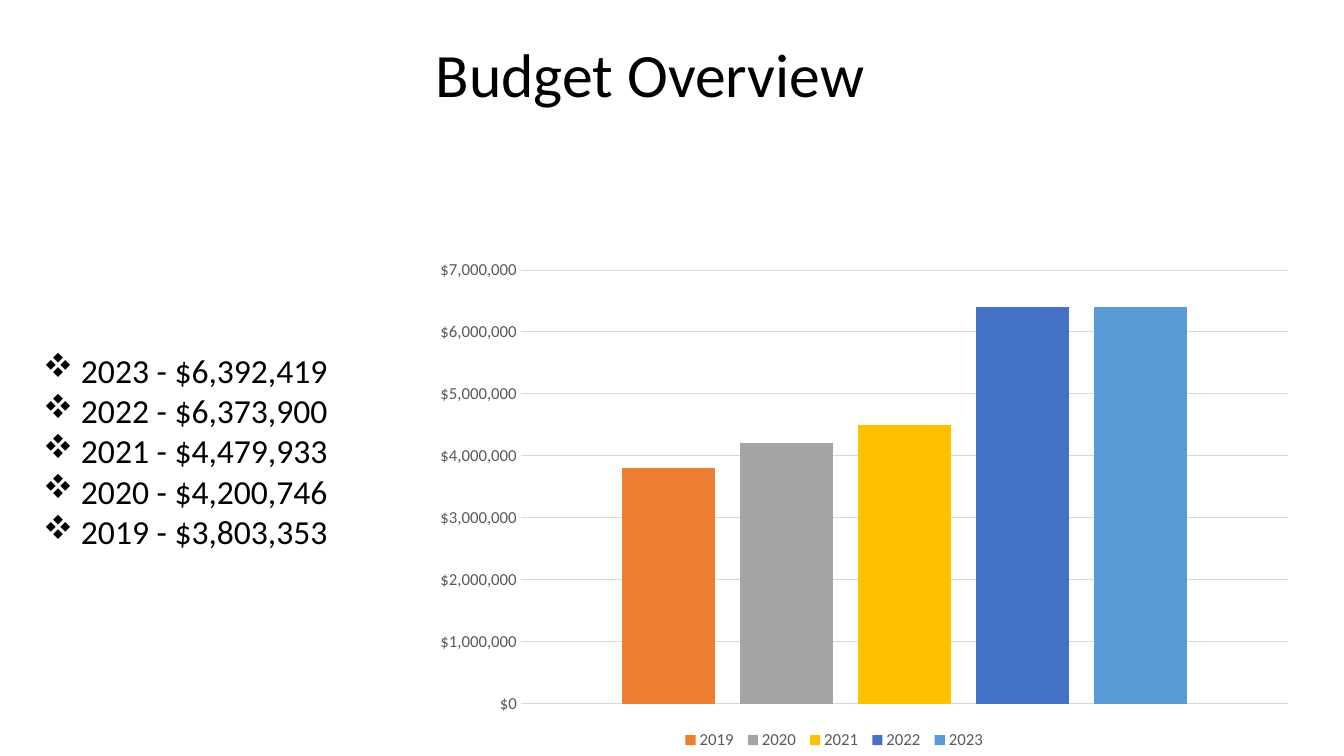
from lxml import etree
from pptx import Presentation
from pptx.chart.data import CategoryChartData
from pptx.dml.color import RGBColor
from pptx.enum.chart import XL_CHART_TYPE, XL_LEGEND_POSITION, XL_TICK_MARK
from pptx.enum.text import PP_ALIGN
from pptx.oxml import parse_xml
from pptx.oxml.ns import nsdecls, qn
from pptx.util import Inches, Pt

COLUMN_CLUSTERED = XL_CHART_TYPE.COLUMN_CLUSTERED
LEGEND_BOTTOM = XL_LEGEND_POSITION.BOTTOM
TICK_NONE = XL_TICK_MARK.NONE
LEFT, CENTER = PP_ALIGN.LEFT, PP_ALIGN.CENTER

FONT = "Calibri"
BULLET_FONT, DIAMONDS = "Wingdings", "v"  # Wingdings draws v as four diamonds
BLACK, GRAY, GRID_GRAY = "000000", "595959", "D9D9D9"

# Year: (budget, column colour)
BUDGETS = {
    "2019": (3803353, "ED7D31"),
    "2020": (4200746, "A5A5A5"),
    "2021": (4479933, "FFC000"),
    "2022": (6373900, "4472C4"),
    "2023": (6392419, "5B9BD5"),
}


def color(hex_string):
    return RGBColor.from_string(hex_string)


def format_font(font, size, hex_string):
    font.name = FONT
    font.size = Pt(size)
    font.color.rgb = color(hex_string)


def add_bullet(paragraph, character, indent):
    properties = paragraph._p.get_or_add_pPr()
    properties.set("marL", str(Inches(indent)))
    properties.set("indent", str(-Inches(indent)))
    bullet_font = etree.SubElement(properties, qn("a:buFont"))
    bullet_font.set("typeface", BULLET_FONT)
    bullet_font.set("charset", "2")
    etree.SubElement(properties, qn("a:buChar")).set("char", character)


def add_text(slide, box, lines, size=24, align=LEFT, bullet=None, indent=0.375):
    shape = slide.shapes.add_textbox(*map(Inches, box))
    frame = shape.text_frame
    frame.word_wrap = True
    for index, line in enumerate(lines):
        paragraph = frame.add_paragraph() if index else frame.paragraphs[0]
        paragraph.alignment = align
        run = paragraph.add_run()
        run.text = line
        format_font(run.font, size, BLACK)
        if bullet:
            add_bullet(paragraph, bullet, indent)


def set_layout(element, position, x, y, width, height, target=""):
    """Place a chart part, in fractions of the chart."""
    for layout in element.findall(qn("c:layout")):
        element.remove(layout)
    element.insert(position, parse_xml(
        f'<c:layout {nsdecls("c")}><c:manualLayout>{target}'
        '<c:xMode val="edge"/><c:yMode val="edge"/>'
        f'<c:x val="{x}"/><c:y val="{y}"/><c:w val="{width}"/><c:h val="{height}"/>'
        '</c:manualLayout></c:layout>'))


def add_budget_chart(slide, box):
    data = CategoryChartData(number_format='"$"#,##0')
    data.categories = ["1"]
    for year, (amount, _) in BUDGETS.items():
        data.add_series(year, [round(amount, -5)])
    chart = slide.shapes.add_chart(COLUMN_CLUSTERED, *map(Inches, box), data).chart
    chart.has_title = False
    format_font(chart.font, 10, BLACK)
    set_layout(chart._chartSpace.chart.plotArea, 0, 0.103, 0.08, 0.885, 0.821,
               target='<c:layoutTarget val="inner"/>')

    # Columns
    plot = chart.plots[0]
    plot.gap_width = 219
    plot.overlap = -27
    plot.vary_by_categories = False
    for series, (_, fill) in zip(plot.series, BUDGETS.values()):
        series.format.fill.solid()
        series.format.fill.fore_color.rgb = color(fill)

    # Axes
    chart.category_axis.visible = False
    axis = chart.value_axis
    axis.minimum_scale, axis.maximum_scale, axis.major_unit = 0, 7000000, 1000000
    axis.major_tick_mark = axis.minor_tick_mark = TICK_NONE
    axis.format.line.fill.background()
    axis.has_major_gridlines = True
    axis.major_gridlines.format.line.color.rgb = color(GRID_GRAY)
    axis.major_gridlines.format.line.width = Pt(0.75)
    axis.tick_labels.number_format = '"$"#,##0'
    axis.tick_labels.number_format_is_linked = False
    format_font(axis.tick_labels.font, 12, GRAY)

    # Legend
    chart.has_legend = True
    legend = chart.legend
    legend.position = LEGEND_BOTTOM
    legend.include_in_layout = False
    format_font(legend.font, 12, GRAY)
    set_layout(legend._element, 1, 0.283, 0.95, 0.363, 0.05)


def build_budget_slide(presentation):
    slide = presentation.slides.add_slide(presentation.slide_layouts[6])
    add_text(slide, (0, 0.31, 12.9, 0.84), ["Budget Overview"], size=44, align=CENTER)
    # Latest year first
    lines = [f"{year} - ${amount:,}" for year, (amount, _) in reversed(BUDGETS.items())]
    add_text(slide, (0.33, 3.42, 3.6, 2.93), lines, bullet=DIAMONDS)
    add_budget_chart(slide, (4.28, 2.26, 8.6, 5.24))


def main():
    presentation = Presentation()
    presentation.slide_width = Inches(13.33)
    presentation.slide_height = Inches(7.5)
    build_budget_slide(presentation)
    presentation.save("out.pptx")


if __name__ == "__main__":
    main()
